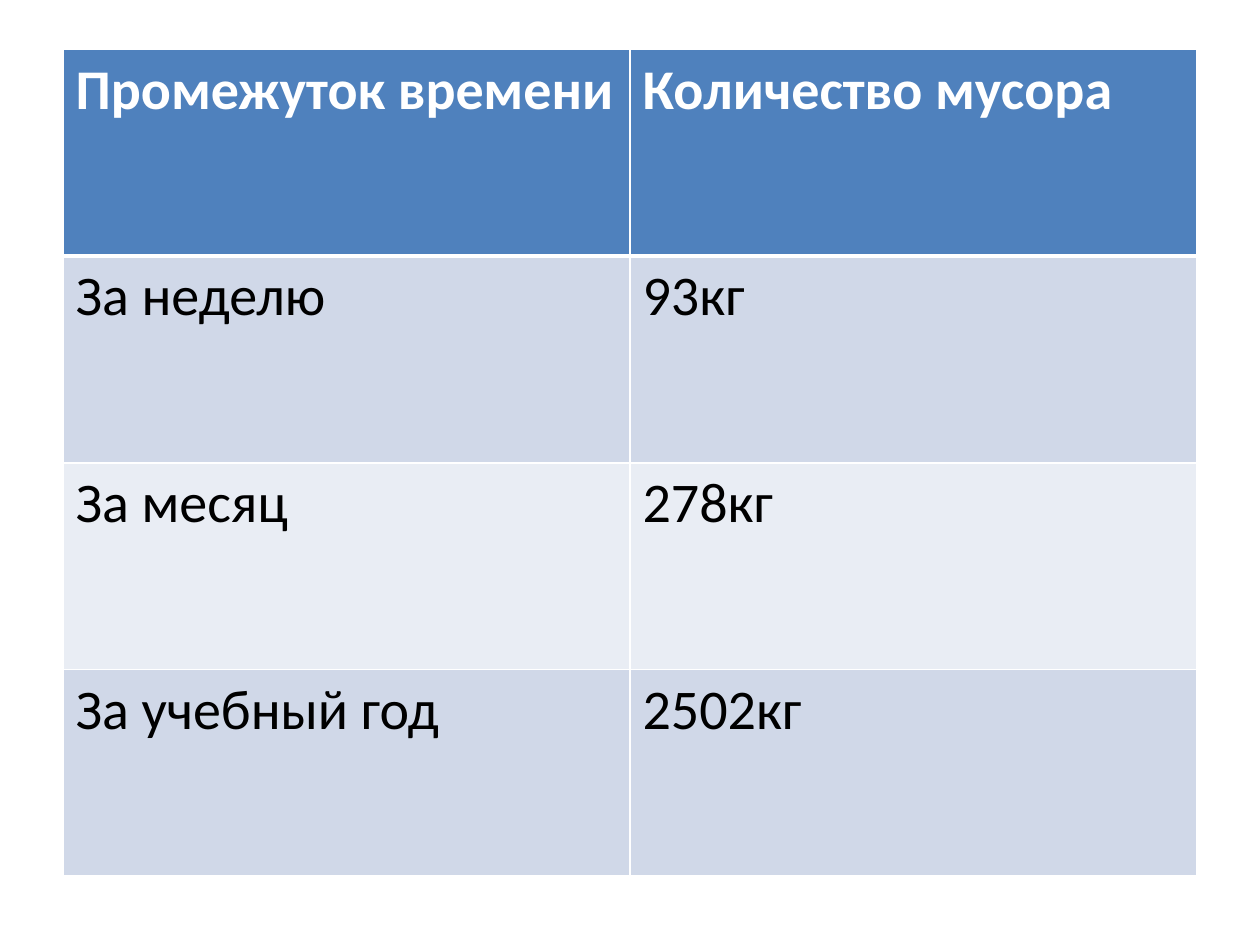
"""Build a slide with a table of waste amounts per period."""
from lxml import etree
from pptx import Presentation
from pptx import util as u
from pptx.dml.color import RGBColor
from pptx.oxml import ns

COLORS = {"header": "4F81BD", "odd": "D0D8E8", "even": "E9EDF4",
          "white": "FFFFFF", "black": "000000"}
ROWS = [
    ("Промежуток времени", "Количество мусора"),
    ("За неделю", "93кг"),
    ("За месяц", "278кг"),
    ("За учебный год", "2502кг"),
]


def rgb(name):
    return RGBColor.from_string(COLORS[name])


def add_border(cell, side, width):
    tc_pr = cell._tc.get_or_add_tcPr()
    ln = etree.SubElement(tc_pr, ns.qn(f"a:ln{side}"), w=str(u.Pt(width)))
    fill = etree.SubElement(ln, ns.qn("a:solidFill"))
    etree.SubElement(fill, ns.qn("a:srgbClr"), val=COLORS["white"])


def format_cell(cell, content, row):
    header = row == 0
    for side in "LRTB":
        thick = (header and side == "B") or (row == 1 and side == "T")
        add_border(cell, side, 3 if thick else 1)
    cell.fill.solid()
    cell.fill.fore_color.rgb = rgb("header" if header else "odd" if row % 2 else "even")
    cell.text_frame.text = content
    r = cell.text_frame.paragraphs[0].runs[0]
    r.font.name = "Calibri"
    r.font.size = u.Pt(32)
    r.font.bold = header
    r.font.color.rgb = rgb("white" if header else "black")


def add_waste_table(s):
    frame = s.shapes.add_table(len(ROWS), len(ROWS[0]), u.Pt(36), u.Pt(28.3),
                               u.Pt(648), u.Pt(472.4))
    for i, row in enumerate(ROWS):
        for j, content in enumerate(row):
            format_cell(frame.table.cell(i, j), content, i)


def main():
    prs = Presentation()
    prs.slide_width, prs.slide_height = u.Pt(720), u.Pt(540)
    s = prs.slides.add_slide(prs.slide_layouts[6])
    add_waste_table(s)
    prs.save("out.pptx")


if __name__ == "__main__":
    main()
